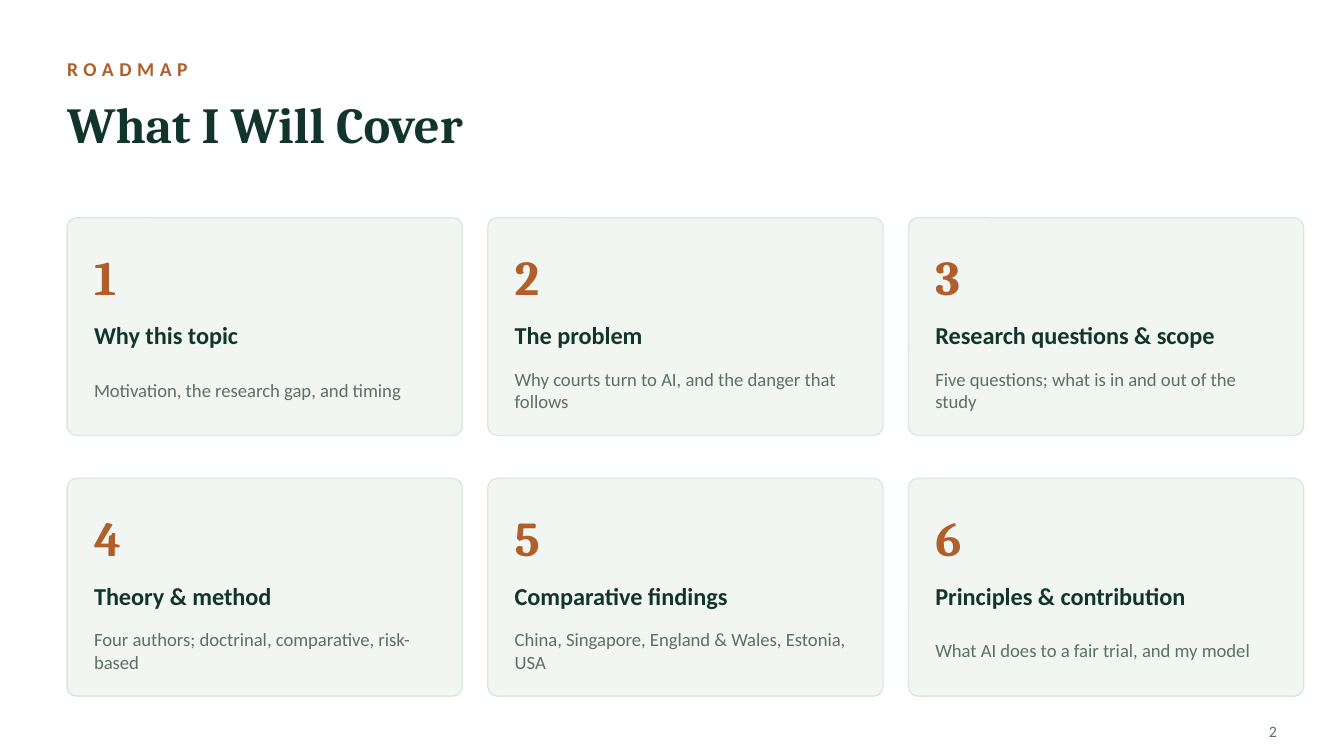
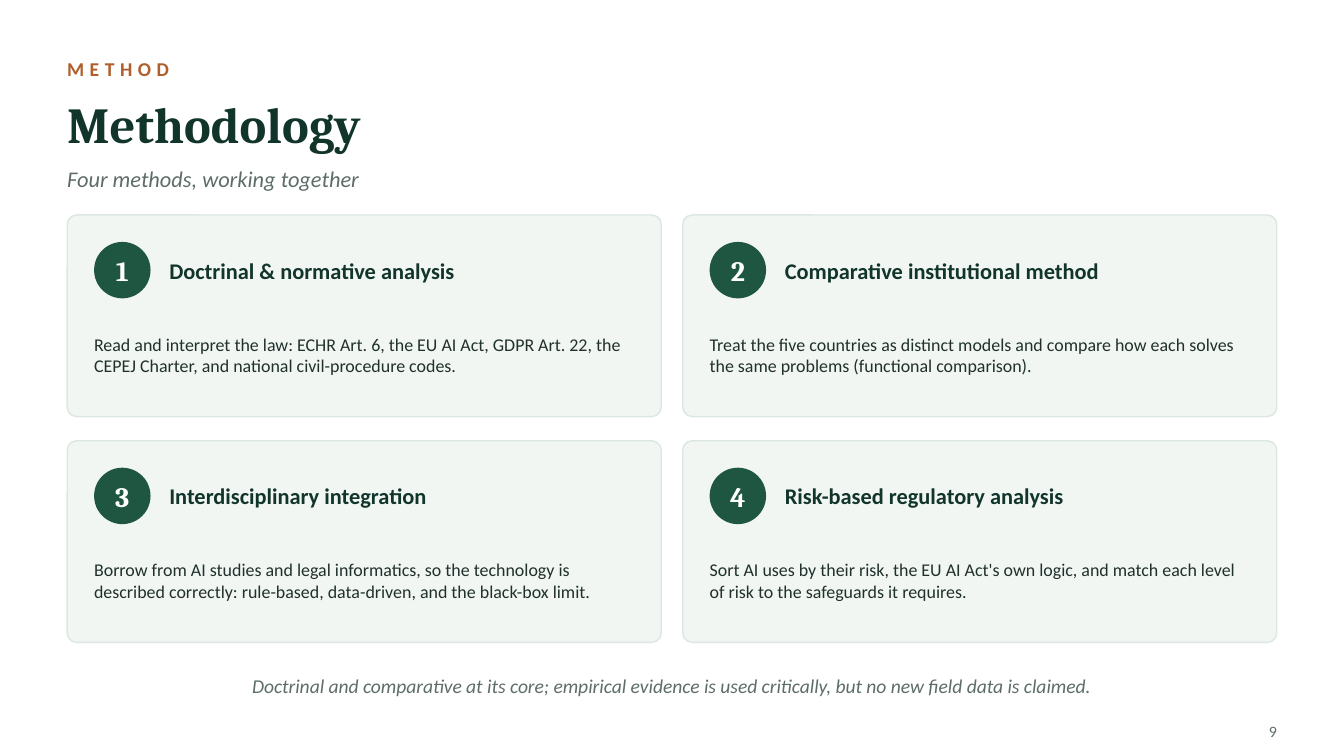
from pptx import Presentation
from pptx.dml.color import RGBColor
from pptx.enum.shapes import MSO_SHAPE
from pptx.enum.text import MSO_ANCHOR, PP_ALIGN
from pptx.util import Inches, Pt

# Content
ROADMAP = [
    ("Why this topic", "Motivation, the research gap, and timing"),
    ("The problem", "Why courts turn to AI, and the danger that follows"),
    ("Research questions & scope", "Five questions; what is in and out of the study"),
    ("Theory & method", "Four authors; doctrinal, comparative, risk-based"),
    ("Comparative findings", "China, Singapore, England & Wales, Estonia, USA"),
    ("Principles & contribution", "What AI does to a fair trial, and my model"),
]
METHODS = [
    ("Doctrinal & normative analysis",
     "Read and interpret the law: ECHR Art. 6, the EU AI Act, GDPR Art. 22, "
     "the CEPEJ Charter, and national civil-procedure codes."),
    ("Comparative institutional method",
     "Treat the five countries as distinct models and compare how each solves "
     "the same problems (functional comparison)."),
    ("Interdisciplinary integration",
     "Borrow from AI studies and legal informatics, so the technology is "
     "described correctly: rule-based, data-driven, and the black-box limit."),
    ("Risk-based regulatory analysis",
     "Sort AI uses by their risk, the EU AI Act's own logic, and match each "
     "level of risk to the safeguards it requires."),
]
METHOD_NOTE = ("Doctrinal and comparative at its core; empirical evidence is used "
               "critically, but no new field data is claimed.")

# Shared style
WHITE = RGBColor(0xFF, 0xFF, 0xFF)
INK = RGBColor(0x20, 0x30, 0x2A)
DARK_GREEN = RGBColor(0x12, 0x35, 0x2B)
GREEN = RGBColor(0x1E, 0x56, 0x41)
RUST = RGBColor(0xB0, 0x5E, 0x2A)
GREY = RGBColor(0x5E, 0x6E, 0x66)
CARD_FILL = RGBColor(0xF1, 0xF6, 0xF3)
CARD_LINE = RGBColor(0xDC, 0xE7, 0xE1)
SANS, SERIF = "Calibri", "Cambria"

ROUND_RECT, OVAL = MSO_SHAPE.ROUNDED_RECTANGLE, MSO_SHAPE.OVAL
MIDDLE = MSO_ANCHOR.MIDDLE
LEFT, CENTER, RIGHT = PP_ALIGN.LEFT, PP_ALIGN.CENTER, PP_ALIGN.RIGHT

# Layout in inches, on a 16:9 slide
SLIDE_W = 10
SLIDE_H = SLIDE_W * 9 / 16
MARGIN = 0.5
CONTENT_W = SLIDE_W - 2 * MARGIN
PAD = 0.2
RADIUS = 0.07
BADGE = 0.42


def box(x, y, w, h):
    return [Inches(round(v, 2)) for v in (x, y, w, h)]


def add_text(s, x, y, w, h, text, size, color, font=SANS, bold=False,
             italic=False, align=LEFT, spacing=None):
    tf = s.shapes.add_textbox(*box(x, y, w, h)).text_frame
    tf.word_wrap = True
    tf.vertical_anchor = MIDDLE
    tf.margin_left = tf.margin_right = tf.margin_top = tf.margin_bottom = 0
    p = tf.paragraphs[0]
    p.alignment = align
    r = p.add_run()
    r.text = text
    r.font.name, r.font.size = font, Pt(size)
    r.font.bold, r.font.italic = bold, italic
    r.font.color.rgb = color
    if spacing:
        r.font._element.set("spc", str(spacing * 100))


def add_filled(s, kind, x, y, w, h, fill, line=None):
    sp = s.shapes.add_shape(kind, *box(x, y, w, h))
    sp.shadow.inherit = False
    sp.fill.solid()
    sp.fill.fore_color.rgb = fill
    if line is None:
        sp.line.fill.background()
    else:
        sp.line.color.rgb = line
        sp.line.width = Pt(0.75)
    return sp


def add_card(s, x, y, w, h):
    sp = add_filled(s, ROUND_RECT, x, y, w, h, CARD_FILL, CARD_LINE)
    sp.adjustments[0] = RADIUS / min(w, h)


def grid(items, cols, top, w, h, gap_x, gap_y):
    """Yield number, left, top and texts for each card, row by row."""
    for i, (head, body) in enumerate(items):
        row, col = divmod(i, cols)
        yield (str(i + 1), MARGIN + col * (w + gap_x),
               top + row * (h + gap_y), head, body)


def new_slide(prs, kicker, title, subtitle=None):
    s = prs.slides.add_slide(prs.slide_layouts[6])
    s.background.fill.solid()
    s.background.fill.fore_color.rgb = WHITE
    add_text(s, MARGIN, 0.38, CONTENT_W, 0.26, kicker, 10.5, RUST,
             bold=True, spacing=3)
    add_text(s, MARGIN, 0.66, CONTENT_W, 0.52, title, 27, DARK_GREEN,
             font=SERIF, bold=True)
    if subtitle:
        add_text(s, MARGIN, 1.18, CONTENT_W, 0.3, subtitle, 12, GREY, italic=True)
    return s


def add_page_number(s, page):
    w = 0.4
    add_text(s, SLIDE_W - MARGIN - w, 5.33, w, 0.22, str(page), 8.5, GREY,
             align=RIGHT)


def roadmap_slide(prs):
    s = new_slide(prs, "ROADMAP", "What I Will Cover")
    w, h = 2.94, 1.62
    inner = w - 2 * PAD
    for number, x, y, head, body in grid(ROADMAP, 3, 1.62, w, h, 0.19, 0.32):
        add_card(s, x, y, w, h)
        left = x + PAD
        add_text(s, left, y + 0.16, 0.6, 0.55, number, 26, RUST,
                 font=SERIF, bold=True)
        add_text(s, left, y + 0.72, inner, 0.3, head, 13, DARK_GREEN, bold=True)
        add_text(s, left, y + 1.02, inner, 0.52, body, 10, GREY)
    add_page_number(s, 2)


def method_slide(prs):
    s = new_slide(prs, "METHOD", "Methodology", "Four methods, working together")
    gap, h = 0.16, 1.5
    w = (CONTENT_W - gap) / 2
    inner = w - 2 * PAD
    indent = BADGE + 0.14
    for number, x, y, head, body in grid(METHODS, 2, 1.6, w, h, gap, 0.18):
        add_card(s, x, y, w, h)
        left = x + PAD
        badge = (left, y + PAD, BADGE, BADGE)
        add_filled(s, OVAL, *badge, GREEN)
        add_text(s, *badge, number, 15, WHITE, font=SERIF, bold=True, align=CENTER)
        add_text(s, left + indent, y + 0.24, inner - indent, 0.34, head, 12,
                 DARK_GREEN, bold=True)
        add_text(s, left, y + 0.72, inner, 0.64, body, 9.6, INK)
    add_text(s, MARGIN, 4.96, CONTENT_W, 0.28, METHOD_NOTE, 10.5, GREY,
             italic=True, align=CENTER)
    add_page_number(s, 9)


def main():
    prs = Presentation()
    prs.slide_width, prs.slide_height = Inches(SLIDE_W), Inches(SLIDE_H)
    roadmap_slide(prs)
    method_slide(prs)
    prs.save("out.pptx")


if __name__ == "__main__":
    main()
